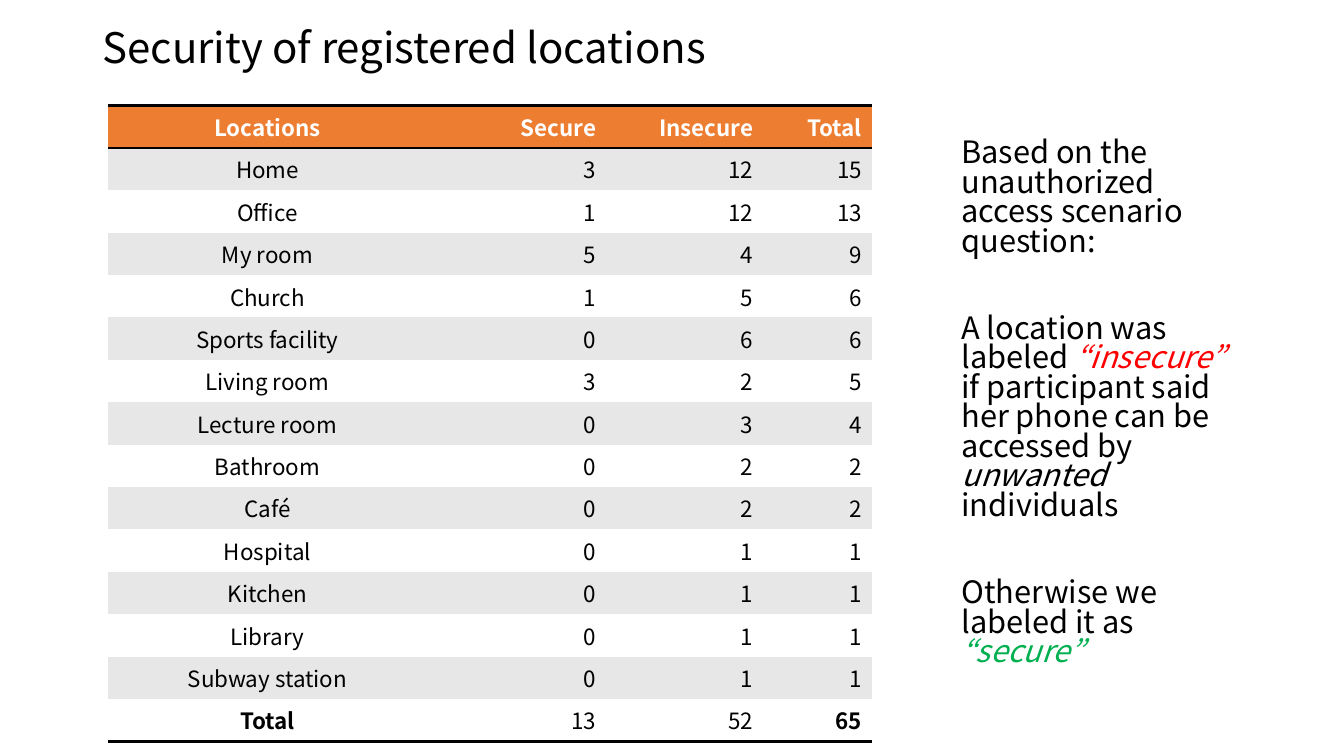
from lxml.etree import SubElement
from pptx import Presentation
from pptx.dml.color import RGBColor
from pptx.enum.text import MSO_ANCHOR, PP_ALIGN
from pptx.oxml.ns import qn
from pptx.util import Cm, Pt

HEADING = "Security of registered locations"
LOCATIONS = [
    ("Locations", "Secure", "Insecure", "Total"),
    ("Home", 3, 12, 15),
    ("Office", 1, 12, 13),
    ("My room", 5, 4, 9),
    ("Church", 1, 5, 6),
    ("Sports facility", 0, 6, 6),
    ("Living room", 3, 2, 5),
    ("Lecture room", 0, 3, 4),
    ("Bathroom", 0, 2, 2),
    ("Café", 0, 2, 2),
    ("Hospital", 0, 1, 1),
    ("Kitchen", 0, 1, 1),
    ("Library", 0, 1, 1),
    ("Subway station", 0, 1, 1),
    ("Total", 13, 52, 65),
]
BLACK, WHITE, ORANGE, GREY = "000000", "FFFFFF", "ED7D31", "E7E7E7"
INSECURE = {"hue": "FF0000", "italic": True}
SECURE = {"hue": "00B050", "italic": True}
EXPLANATION = [
    [("Based on the unauthorized access scenario question:", {})],
    [
        ("A location was labeled ", {}),
        ("“insecure”", INSECURE),
        (" if participant said her phone can be accessed by ", {}),
        ("unwanted", {"italic": True}),
        (" individuals", {}),
    ],
    [("Otherwise we labeled it as ", {}), ("“secure”", SECURE)],
]
COLUMN_WIDTHS = (8.04, 4.52, 3.96, 2.74)
ROW_HEIGHT = 1.03
FONT = "Noto Sans CJK KR"


def color(code):
    return RGBColor.from_string(code)


def add_words(paragraph, words, size, hue=BLACK, bold=False, italic=False):
    run = paragraph.add_run()
    run.text = words
    looks = {"name": FONT, "size": Pt(size), "bold": bold, "italic": italic}
    for attribute, value in looks.items():
        setattr(run.font, attribute, value)
    run.font.color.rgb = color(hue)


def set_borders(cell, ruled_sides):
    properties = cell._tc.get_or_add_tcPr()
    for position, side in enumerate("LRTB"):
        border = SubElement(properties, qn(f"a:ln{side}"))
        properties.insert(position, border)
        if side in ruled_sides:
            border.set("w", str(Pt(2)))
            fill = SubElement(border, qn("a:solidFill"))
            SubElement(fill, qn("a:srgbClr")).set("val", BLACK)
        else:
            SubElement(border, qn("a:noFill"))


def place(part, left, top, width, height):
    part.left, part.top = Cm(left), Cm(top)
    part.width, part.height = Cm(width), Cm(height)


def add_heading(slide):
    heading = slide.shapes.title
    place(heading, 2.33, -0.58, 29.21, 3.68)
    heading.text_frame.vertical_anchor = MSO_ANCHOR.MIDDLE
    paragraph = heading.text_frame.paragraphs[0]
    paragraph.alignment = PP_ALIGN.LEFT
    paragraph.line_spacing = 0.9
    add_words(paragraph, HEADING, 30)


def add_locations(slide):
    last = len(LOCATIONS) - 1
    locations = slide.shapes.add_table(
        len(LOCATIONS), len(COLUMN_WIDTHS), Cm(2.72), Cm(2.66),
        Cm(sum(COLUMN_WIDTHS)), Cm(ROW_HEIGHT * len(LOCATIONS)),
    ).table
    for column, width in zip(locations.columns, COLUMN_WIDTHS):
        column.width = Cm(width)
    for i, entries in enumerate(LOCATIONS):
        locations.rows[i].height = Cm(ROW_HEIGHT)
        background = ORANGE if i == 0 else GREY if i % 2 else WHITE
        ruled_sides = ("T" if i < 2 else "") + ("B" if i in (0, last) else "")
        for j, entry in enumerate(entries):
            cell = locations.cell(i, j)
            cell.fill.solid()
            cell.fill.fore_color.rgb = color(background)
            set_borders(cell, ruled_sides)
            paragraph = cell.text_frame.paragraphs[0]
            paragraph.alignment = PP_ALIGN.RIGHT if j else PP_ALIGN.CENTER
            bold = i == 0 or (i == last and j in (0, 3))
            add_words(paragraph, str(entry), 16, BLACK if i else WHITE, bold)


def add_explanation(slide):
    frame = slide.shapes.add_textbox(Cm(23.98), Cm(3.4), Cm(7.57), Cm(14.38)).text_frame
    frame.word_wrap = True
    for i, pieces in enumerate(EXPLANATION):
        paragraph = frame.add_paragraph() if i else frame.paragraphs[0]
        paragraph.line_spacing = 0.8
        paragraph.space_before = Pt(41 if i else 0)
        for words, looks in pieces:
            add_words(paragraph, words, 22, **looks)


def main():
    presentation = Presentation()
    presentation.slide_width, presentation.slide_height = Cm(33.87), Cm(19.05)
    slide = presentation.slides.add_slide(presentation.slide_layouts[5])
    add_heading(slide)
    add_locations(slide)
    add_explanation(slide)
    presentation.save("out.pptx")


if __name__ == "__main__":
    main()
